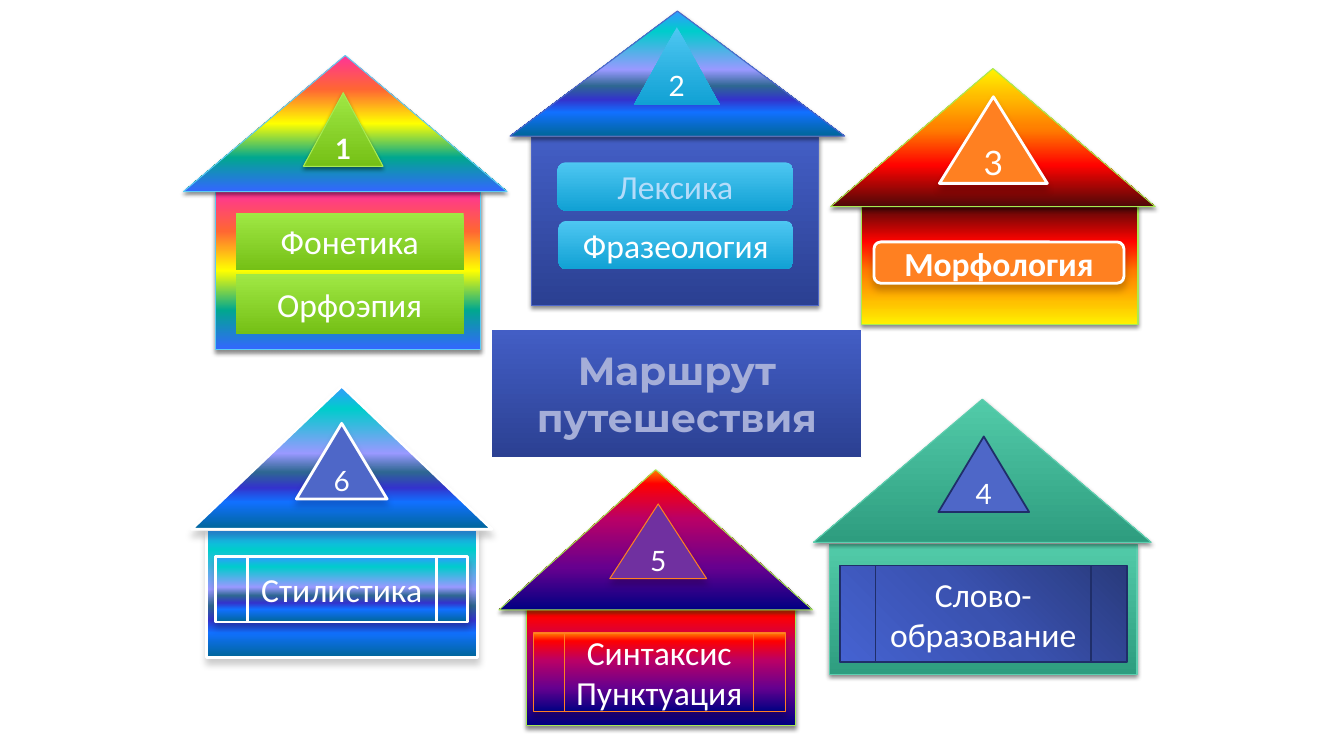
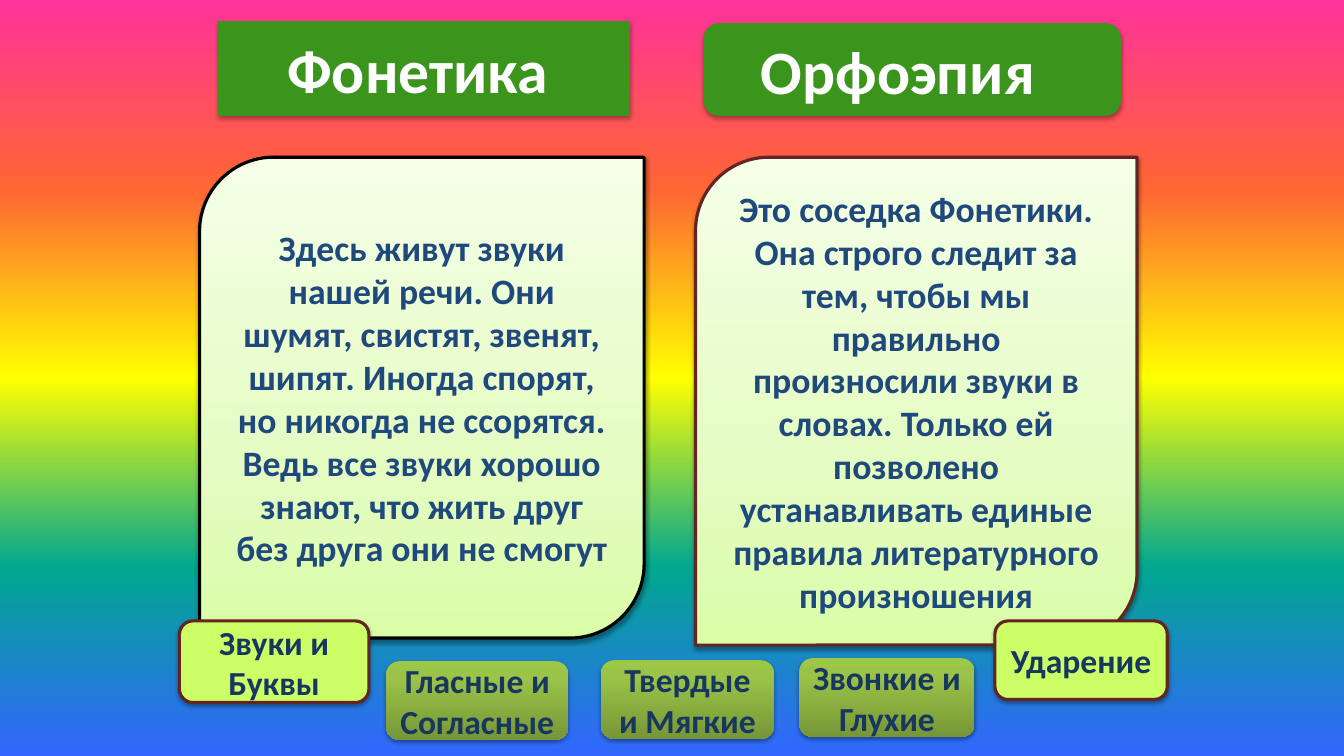
from dataclasses import dataclass

from lxml.etree import SubElement as Sub
from pptx import Presentation
from pptx.dml.color import RGBColor as Rgb
from pptx.enum.shapes import MSO_SHAPE as Geo
from pptx.enum.text import MSO_ANCHOR as Anchor, MSO_AUTO_SIZE as Auto, PP_ALIGN as Align
from pptx.oxml.ns import qn
from pptx.util import Inches, Pt

CELL = 0.1  # one grid column or row, in inches
COLS, ROWS = 133.33, 75


@dataclass(frozen=True)
class Theme:
    # Plain colours
    white: str = "FFFFFF"
    black: str = "000000"
    orange: str = "FF8021"
    blue: str = "4E67C8"
    navy: str = "1F2E69"
    lime: str = "A7EA52"
    sky: str = "5ECCF3"
    mint: str = "5DCEAF"
    violet: str = "7030A0"
    pale: str = "B4DCFA"
    haze: str = "A5AED8"
    green: str = "3B941C"
    yellow: str = "CCFF66"
    brown: str = "632523"
    ink: str = "1F497D"
    dark: str = "17375E"
    # Gradients: (position, colour) from top to bottom
    rainbow: tuple = ((0, "FF3399"), (25, "FF6633"), (50, "FFFF00"),
                      (75, "01A78F"), (100, "3366FF"))
    ocean: tuple = ((0, "3399FF"), (16, "00CCCC"), (47, "9999FF"), (60, "2E6792"),
                    (71, "3333CC"), (81, "1170FF"), (100, "006699"))
    fire: tuple = ((0, "FFF200"), (45, "FF7A00"), (70, "FF0300"), (100, "4D0808"))
    ember: tuple = ((0, "4D0808"), (30, "FF0300"), (55, "FF7A00"), (73, "FFA900"),
                    (82, "FFC200"), (100, "FFF200"))
    dusk: tuple = ((0, "FF8200"), (10, "FF0000"), (35, "BA0066"),
                   (70, "66008F"), (100, "000082"))
    grass: tuple = ((0, "A0E844"), (100, "75C016"))
    teal: tuple = ((0, "52CBA9"), (100, "2E9D7F"))
    royal: tuple = ((0, "435EC5"), (100, "2B4092"))
    night: tuple = ((0, "293A7C"), (50, "3A52B0"), (100, "4562D1"))
    aqua: tuple = ((0, "4EC7F2"), (100, "11A1D4"))
    cream: tuple = ((0, "F5FFE7"), (65, "E4FCC2"), (100, "DAFDA7"))
    olive: tuple = ((0, "9DC746"), (20, "9BC348"), (100, "779737"))
    # Shadows: opacity, blur, distance
    near: tuple = (45, 3.1, 1.8)
    far: tuple = (20, 5, 4)
    soft: tuple = (35, 3.1, 1.8)
    # Type
    face: str = "Calibri"
    digit: str = "Lato"
    show: str = "Montserrat"
    small: float = 20
    label: float = 24
    body: float = 25.5
    head: float = 28
    big: float = 44


T = Theme()


def write(shape, text, size=T.label, font=T.face, color=T.white, bold=False, right=0.1):
    """Put centred text in a shape; each line is a paragraph."""
    frame = shape.text_frame
    frame.text = text
    frame.word_wrap = True
    frame.auto_size = Auto.NONE
    frame.vertical_anchor = Anchor.MIDDLE
    frame.margin_left, frame.margin_right = Inches(0.1), Inches(right)
    frame.margin_top = frame.margin_bottom = Inches(0.05)
    for para in frame.paragraphs:
        para.alignment = Align.CENTER
        for run in para.runs:
            run.font.size, run.font.name, run.font.bold = Pt(size), font, bold
            run.font.color.rgb = Rgb.from_string(color)


class Deck:
    def __init__(self):
        self.file = Presentation()
        self.file.slide_width = Inches(COLS * CELL)
        self.file.slide_height = Inches(ROWS * CELL)
        self.page = None

    def slide(self):
        self.page = self.file.slides.add_slide(self.file.slide_layouts[5])

    def paint(self, fill, root, tone, angle=90):
        """Fill with one colour, or with stops along a clockwise angle."""
        if isinstance(tone, str):
            fill.solid()
            fill.fore_color.rgb = Rgb.from_string(tone)
            return
        fill.gradient()
        fill.gradient_angle = 360 - angle
        stops = next(root.iter(qn("a:gsLst")))
        for stop in list(stops):
            stops.remove(stop)
        for place, color in tone:
            stop = Sub(stops, qn("a:gs"), pos=str(place * 1000))
            Sub(stop, qn("a:srgbClr"), val=color)

    def back(self, tone):
        self.paint(self.page.background.fill, self.page.element, tone)

    def style(self, shape, tone, line=None, width=0.75, shade=None, angle=90):
        self.paint(shape.fill, shape.element, tone, angle)
        if line:
            shape.line.color.rgb = Rgb.from_string(line)
            shape.line.width = Pt(width)
        else:
            shape.line.fill.background()
        shape.shadow.inherit = False
        if shade:
            alpha, blur, dist = shade
            effects = next(shape.element.iter(qn("a:effectLst")))
            drop = Sub(effects, qn("a:outerShdw"), blurRad=str(Pt(blur)),
                       dist=str(Pt(dist)), dir="5400000", rotWithShape="0")
            color = Sub(drop, qn("a:srgbClr"), val=T.black)
            Sub(color, qn("a:alpha"), val=str(alpha * 1000))

    def shape(self, kind, box, tone, text="", look=None, **form):
        part = self.page.shapes.add_shape(kind, *(Inches(n * CELL) for n in box))
        self.style(part, tone, **form)
        if text:
            write(part, text, **(look or {}))

    def title(self, box, tone, text, look, **form):
        """Turn the title placeholder into a rounded panel."""
        part = self.page.shapes.title
        part.left, part.top, part.width, part.height = (Inches(n * CELL) for n in box)
        outline = Sub(part.element.spPr, qn("a:prstGeom"), prst="roundRect")
        Sub(outline, qn("a:avLst"))
        self.style(part, tone, **form)
        write(part, text, **look)

    def house(self, wall, roof, sign, number, plates, kind, walls, roofs, edge,
              signs, panel=None, look=None, digit=None):
        """Wall, roof, numbered gable sign and name plates."""
        self.shape(Geo.RECTANGLE, wall, walls, **edge)
        self.shape(Geo.ISOSCELES_TRIANGLE, roof, roofs, **edge)
        self.shape(Geo.FLOWCHART_EXTRACT, sign, text=number,
                   look=dict(size=T.small, font=T.digit) | (digit or {}), **signs)
        for box, text, *color in plates:
            tint = {"color": color[0]} if color else {}
            self.shape(kind, box, text=text, look=(look or {}) | tint, **(panel or signs))


def route(deck):
    deck.slide()
    deck.title((48.8, 32.7, 36.7, 12.7), T.royal, "Маршрут путешествия",
               dict(size=T.head, font=T.show, color=T.haze, bold=True), line=T.white)

    def rim(color):
        return dict(line=color, shade=T.near)

    bold = dict(line=T.white, width=2, shade=T.far)
    thin = dict(line=T.orange, shade=T.far)
    navy = dict(line=T.navy, width=1.25)
    process = Geo.FLOWCHART_PREDEFINED_PROCESS
    rounded = Geo.ROUNDED_RECTANGLE

    # Top row
    deck.house((21.4, 19, 26.3, 15.7), (18.2, 5.5, 32.1, 13.5), (30.1, 9.2, 7.9, 7.3), "1",
               [((23.4, 21.1, 22.6, 5.7), "Фонетика"), ((23.4, 27.2, 22.6, 5.9), "Орфоэпия")],
               process, T.rainbow, T.rainbow, rim(T.sky),
               dict(tone=T.grass, **rim(T.lime)), dict(tone=T.grass), digit=dict(bold=True))
    deck.house((52.7, 13.6, 28.5, 16.7), (50.6, 1.1, 33.2, 12.4), (62.9, 2.7, 8.5, 7.7), "2",
               [((55.3, 16.1, 23.4, 4.8), "Лексика", T.pale),
                ((55.4, 21.9, 23.3, 4.8), "Фразеология")],
               rounded, T.royal, T.ocean, rim(T.blue), dict(tone=T.aqua))
    deck.house((85.5, 20.4, 27.4, 11.8), (82.4, 6.8, 32.2, 13.7), (93.2, 9.6, 10.7, 8.6), "3",
               [((86.7, 24, 24.8, 4.1), "Морфология")],
               rounded, T.ember, T.fire, rim(T.lime), dict(tone=T.orange, **bold),
               look=dict(bold=True), digit=dict(size=T.label))

    # Bottom row
    deck.house((82.3, 54, 30.5, 12.9), (80.7, 39.6, 33.5, 14.2), (93.1, 43.3, 9, 7.5), "4",
               [((83.3, 56.1, 28.5, 9.6), "Слово-образование")],
               process, T.teal, T.teal, rim(T.mint), dict(tone=T.blue, **navy),
               dict(tone=T.night, angle=135, **navy))
    deck.house((52.2, 59.9, 26.7, 12.1), (49.5, 46.6, 31.1, 13.9), (60.5, 50, 9.6, 7.4), "5",
               [((52.9, 62.8, 25, 7.8), "Синтаксис\nПунктуация")],
               process, T.dusk, T.dusk, rim(T.lime), dict(tone=T.violet, **thin),
               dict(tone=T.dusk, **thin))
    deck.house((20.5, 52.5, 26.9, 12.7), (19, 38.3, 29.8, 14.2), (29.4, 42, 9, 7.5), "6",
               [((21.4, 55.2, 25, 6.5), "Стилистика")],
               process, T.ocean, T.ocean, bold, dict(tone=T.blue, **bold),
               dict(tone=T.ocean, **bold))


def sounds(deck):
    deck.slide()
    deck.back(T.rainbow)

    # Headings
    head = dict(size=T.big, bold=True)
    deck.title((21.6, 2.1, 40.9, 9.4), T.green, "Фонетика",
               head | dict(right=0.22), shade=T.soft)
    deck.shape(Geo.ROUNDED_RECTANGLE, (69.8, 2.3, 41.4, 9.2), T.green, "Орфоэпия",
               head | dict(right=0.38), shade=T.soft)

    # Story cards
    cards = [
        ((19.8, 15.6, 44.1, 47.7), T.black,
         "Здесь живут звуки нашей речи. Они шумят, свистят, звенят, шипят. Иногда спорят, "
         "но никогда не ссорятся. Ведь все звуки хорошо знают, что жить друг без друга "
         "они не смогут"),
        ((69, 15.6, 43.8, 48.4), T.brown,
         "Это соседка Фонетики. Она строго следит за тем, чтобы мы правильно произносили "
         "звуки в словах. Только ей позволено устанавливать единые правила литературного "
         "произношения"),
    ]
    for box, edge, text in cards:
        deck.shape(Geo.ROUND_2_DIAG_RECTANGLE, box, T.cream, text,
                   dict(size=T.body, color=T.ink, bold=True),
                   line=edge, width=2.25, shade=T.soft)

    # Topic tags
    bright = dict(tone=T.yellow, line=T.brown, width=2.25, shade=T.soft)
    dim = dict(tone=T.olive, shade=T.soft)
    tags = [
        ((17.8, 61.6, 18.8, 8.1), "Звуки и Буквы", bright),
        ((38.3, 65.6, 18.1, 7.8), "Гласные и Согласные", dim),
        ((59.6, 65.5, 17.2, 7.8), "Твердые и Мягкие", dim),
        ((79.3, 65.3, 17.4, 7.8), "Звонкие и Глухие", dim),
        ((98.7, 61.6, 17.1, 7.8), "Ударение", bright),
    ]
    for box, text, form in tags:
        deck.shape(Geo.ROUNDED_RECTANGLE, box, text=text,
                   look=dict(color=T.dark, bold=True), **form)


def main():
    deck = Deck()
    route(deck)
    sounds(deck)
    deck.file.save("out.pptx")


if __name__ == "__main__":
    main()
